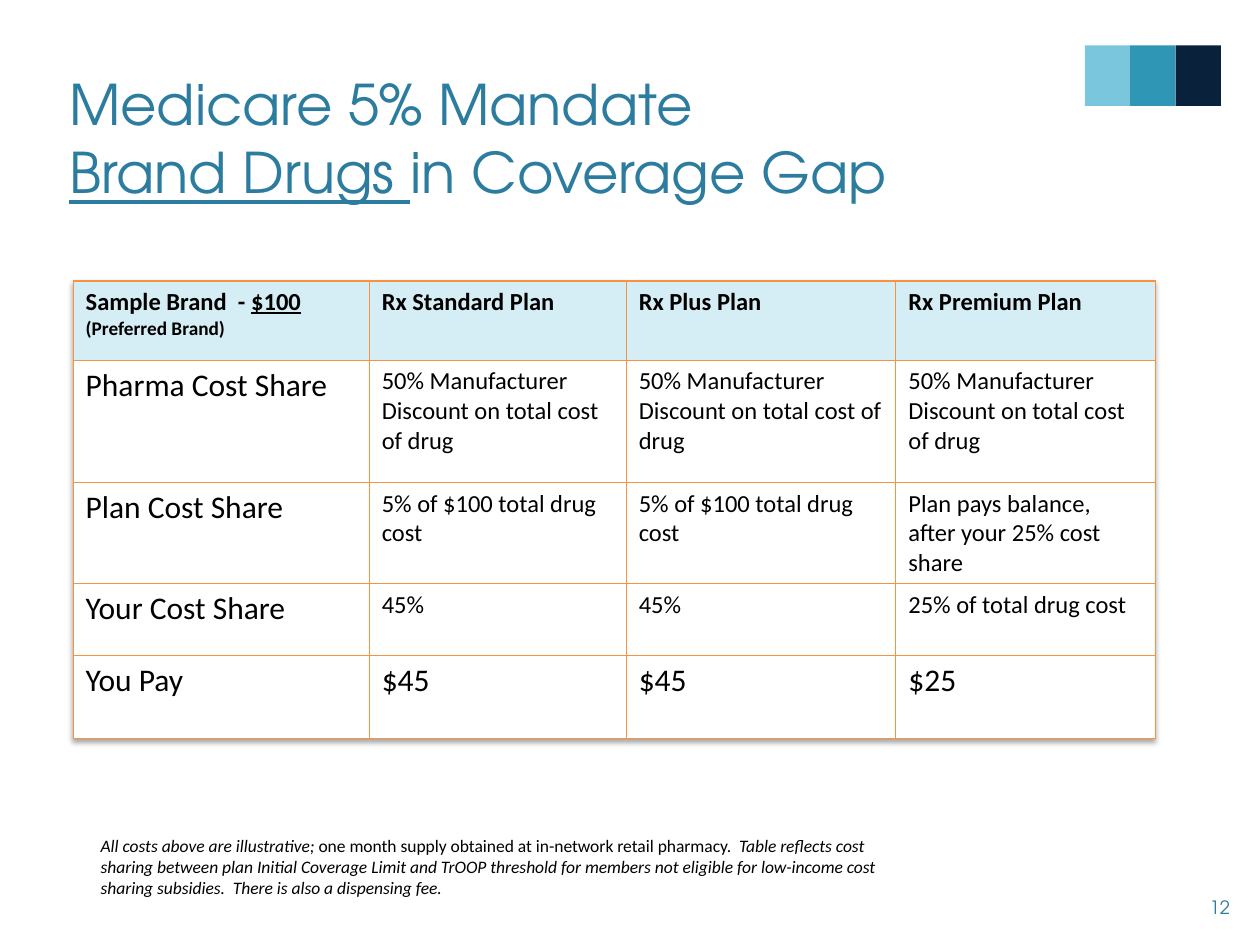
from dataclasses import dataclass

from lxml import etree
from pptx import Presentation
from pptx.dml.color import RGBColor
from pptx.enum.shapes import MSO_SHAPE
from pptx.enum.text import MSO_ANCHOR, MSO_AUTO_SIZE, PP_ALIGN
from pptx.oxml.ns import qn
from pptx.util import Emu, Pt

RECT = MSO_SHAPE.RECTANGLE
TOP, MIDDLE, BOTTOM = MSO_ANCHOR.TOP, MSO_ANCHOR.MIDDLE, MSO_ANCHOR.BOTTOM
LEFT, RIGHT = PP_ALIGN.LEFT, PP_ALIGN.RIGHT
FIT_SHAPE = MSO_AUTO_SIZE.SHAPE_TO_FIT_TEXT
EMU_PER_PX = 9144  # 100 px to the inch


@dataclass(frozen=True)
class Theme:
    title_font: str = "TeX Gyre Adventor"
    body_font: str = "Calibri"
    accent: str = "2C7C9F"
    ink: str = "000000"
    header_fill: str = "D5EDF4"
    cell_fill: str = "FFFFFF"
    border: str = "F69240"
    squares: tuple = ("7AC6DC", "2F97B5", "09213B")
    title_size: float = 32
    label_size: float = 18
    cell_size: float = 14
    sub_size: float = 11
    number_size: float = 10.5
    note_size: float = 10
    border_width: float = 0.75


THEME = Theme()


@dataclass(frozen=True)
class Box:
    x: int
    y: int
    w: int
    h: int

    def emu(self) -> list[Emu]:
        return [px(v) for v in (self.x, self.y, self.w, self.h)]


@dataclass(frozen=True)
class Span:
    text: str
    size: float
    font: str = THEME.body_font
    color: str = THEME.ink
    bold: bool = False
    italic: bool = False
    underline: bool = False
    new_line: bool = False


def px(value: int) -> Emu:
    return Emu(value * EMU_PER_PX)


def write(p, spans: list[Span]) -> None:
    for span in spans:
        if span.new_line:
            p.add_line_break()
        r = p.add_run()
        r.text = span.text
        font = r.font
        font.name, font.size = span.font, Pt(span.size)
        font.bold, font.italic = span.bold, span.italic
        font.underline = span.underline
        font.color.rgb = RGBColor.from_string(span.color)


def add_text(s, box: Box, spans: list[Span], anchor=TOP, align=LEFT, fit=None) -> None:
    tf = s.shapes.add_textbox(*box.emu()).text_frame
    tf.word_wrap = True
    tf.vertical_anchor = anchor
    if fit is not None:
        tf.auto_size = fit
    tf.paragraphs[0].alignment = align
    write(tf.paragraphs[0], spans)


def add_square(s, box: Box, color: str) -> None:
    sp = s.shapes.add_shape(RECT, *box.emu())
    sp.shadow.inherit = False
    sp.fill.solid()
    sp.fill.fore_color.rgb = RGBColor.from_string(color)
    sp.line.fill.background()


def add_color(parent, color: str):
    return etree.SubElement(parent, qn("a:srgbClr"), val=color)


def set_borders(cell) -> None:
    tc_pr = cell._tc.get_or_add_tcPr()
    for i, side in enumerate(("lnL", "lnR", "lnT", "lnB")):
        ln = etree.Element(qn(f"a:{side}"), w=str(Pt(THEME.border_width)))
        add_color(etree.SubElement(ln, qn("a:solidFill")), THEME.border)
        tc_pr.insert(i, ln)


def add_table_shadow(table) -> None:
    effects = etree.Element(qn("a:effectLst"))
    shadow = etree.SubElement(effects, qn("a:outerShdw"), blurRad="40000",
                              dist="23000", dir="5400000", rotWithShape="0")
    etree.SubElement(add_color(shadow, THEME.ink), qn("a:alpha"), val="35000")
    table._tbl.tblPr.insert(0, effects)


def add_plan_table(s, box: Box, widths: list[int], heights: list[int],
                   rows: list[list[list[Span]]]) -> None:
    table = s.shapes.add_table(len(rows), len(widths), *box.emu()).table
    table.horz_banding = False
    add_table_shadow(table)
    for column, width in zip(table.columns, widths):
        column.width = px(width)
    for i, (row, height) in enumerate(zip(rows, heights)):
        table.rows[i].height = px(height)
        for j, spans in enumerate(row):
            cell = table.cell(i, j)
            cell.fill.solid()
            fill = THEME.cell_fill if i else THEME.header_fill
            cell.fill.fore_color.rgb = RGBColor.from_string(fill)
            set_borders(cell)
            write(cell.text_frame.paragraphs[0], spans)


def header(text: str, **style) -> Span:
    return Span(text, THEME.cell_size, bold=True, **style)


def heading(text: str, **style) -> Span:
    return Span(text, THEME.title_size, THEME.title_font, THEME.accent, **style)


def note(text: str, italic: bool = True) -> Span:
    return Span(text, THEME.note_size, italic=italic)


def body_row(label: str, values: list[str], size: float = THEME.cell_size) -> list[list[Span]]:
    return [[Span(label, THEME.label_size)]] + [[Span(v, size)] for v in values]


def main() -> None:
    prs = Presentation()
    prs.slide_width, prs.slide_height = px(1000), px(750)
    s = prs.slides.add_slide(prs.slide_layouts[6])

    # Corner squares
    side = 36
    for i, color in enumerate(THEME.squares):
        add_square(s, Box(861 + i * side, 36, side, 48), color)

    # Title and slide number
    add_text(s, Box(45, 42, 743, 125), [
        heading("Medicare 5% Mandate "),
        heading("Brand Drugs ", underline=True, new_line=True),
        heading("in Coverage Gap"),
    ], anchor=BOTTOM)
    add_text(s, Box(931, 700, 55, 40),
             [Span("12", THEME.number_size, THEME.title_font, THEME.accent)],
             anchor=MIDDLE, align=RIGHT)

    # Cost share table
    discount = "50% Manufacturer Discount on total cost of drug"
    plan_share = "5% of $100 total drug cost"
    corner = [header("Sample Brand  - "), header("$100", underline=True),
              Span("(Preferred Brand)", THEME.sub_size, bold=True, new_line=True)]
    plans = ["Rx Standard Plan", "Rx Plus Plan", "Rx Premium Plan"]
    rows = [
        [corner] + [[header(plan)] for plan in plans],
        body_row("Pharma Cost Share", [discount] * 3),
        body_row("Plan Cost Share", [plan_share, plan_share,
                                     "Plan pays balance, after your 25% cost share"]),
        body_row("Your Cost Share", ["45%", "45%", "25% of total drug cost"]),
        body_row("You Pay", ["$45", "$45", "$25"], THEME.label_size),
    ]
    add_plan_table(s, Box(58, 223, 859, 363), [235, 204, 214, 206],
                   [63, 97, 80, 57, 66], rows)

    # Footnote
    add_text(s, Box(70, 658, 658, 61), [
        note("All costs above are illustrative; "),
        note("one month supply obtained at in-network retail pharmacy.  ", italic=False),
        note("Table reflects cost sharing between plan Initial Coverage Limit and TrOOP "
             "threshold for members not eligible for low-income cost sharing subsidies.  "
             "There is also a dispensing fee."),
    ], fit=FIT_SHAPE)

    prs.save("out.pptx")


if __name__ == "__main__":
    main()
